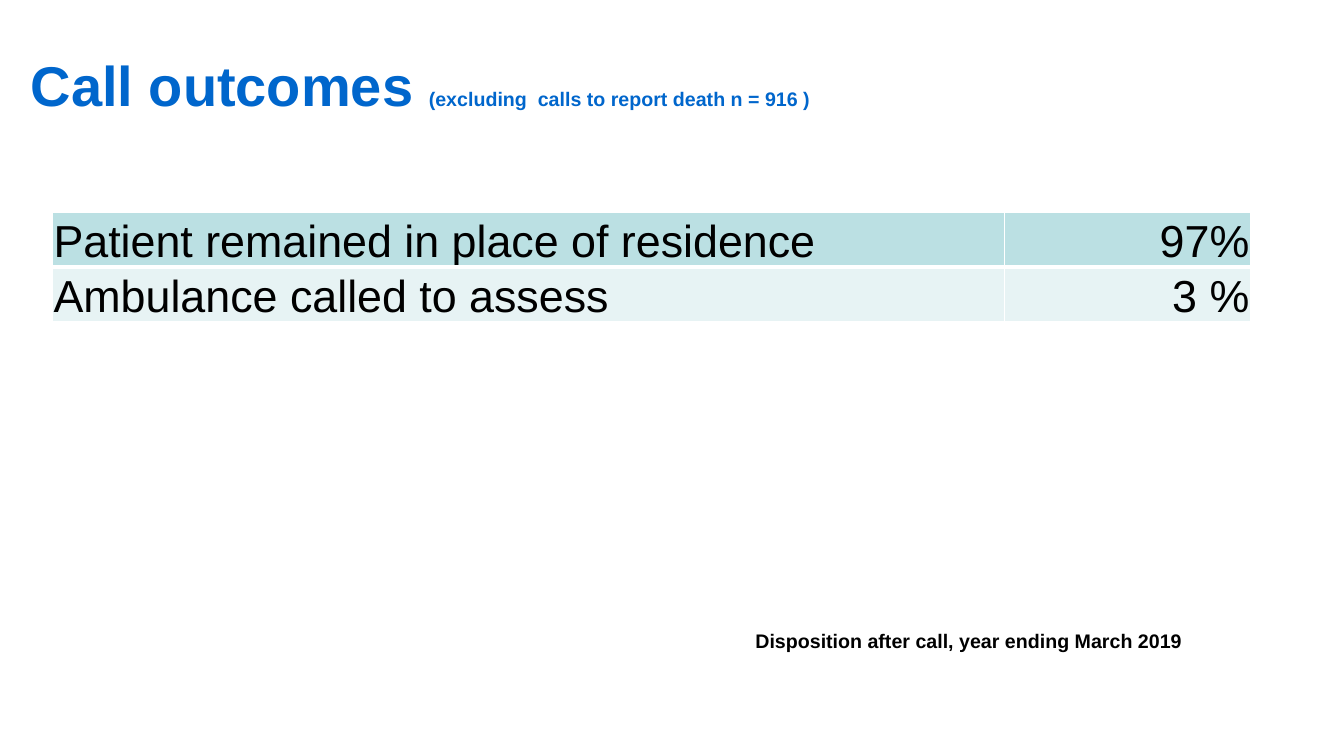
from dataclasses import dataclass

from lxml import etree
from pptx import Presentation
from pptx.dml.color import RGBColor
from pptx.enum.text import MSO_ANCHOR, PP_ALIGN
from pptx.oxml.ns import qn
from pptx.util import Pt

LEFT, RIGHT = PP_ALIGN.LEFT, PP_ALIGN.RIGHT
TOP, MIDDLE, BOTTOM = MSO_ANCHOR.TOP, MSO_ANCHOR.MIDDLE, MSO_ANCHOR.BOTTOM
EMU_PER_PX = 9525
BLANK_LAYOUT = 6


@dataclass(frozen=True)
class Theme:
    """Colours, font and type sizes of the deck."""
    font: str = "Arial"
    title: str = "0066CC"
    text: str = "000000"
    border: str = "FFFFFF"
    bands: tuple = ("BBE0E3", "E7F3F4")
    title_size: int = 40
    table_size: int = 32
    note_size: int = 14


THEME = Theme()
OUTCOMES = [
    ("Patient remained in place of residence", "97%"),
    ("Ambulance called to assess", "3 %"),
]


def px(length):
    """Turn px into EMU."""
    return length * EMU_PER_PX


def add_run(para, text, size, color, bold=False):
    """Add one styled run to a paragraph."""
    span = para.add_run()
    span.text = text
    span.font.name = THEME.font
    span.font.size = Pt(size)
    span.font.bold = bold
    span.font.color.rgb = RGBColor.from_string(color)


def add_text(page, box, spans, color, anchor=TOP, wrap=True):
    """Place a bold line of (text, size) spans in a box."""
    frame = page.shapes.add_textbox(*map(px, box)).text_frame
    frame.word_wrap = wrap
    frame.vertical_anchor = anchor
    for text, size in spans:
        add_run(frame.paragraphs[0], text, size, color, bold=True)


def add_border(cell, side, points):
    """Draw one side of a cell's border."""
    properties = cell._tc.get_or_add_tcPr()
    line = etree.SubElement(properties, qn(f"a:ln{side}"), w=str(Pt(points)))
    fill = etree.SubElement(line, qn("a:solidFill"))
    etree.SubElement(fill, qn("a:srgbClr"), val=THEME.border)


def fill_cell(cell, text, align, band, borders):
    """Style one table cell and write its text."""
    cell.margin_left = cell.margin_right = cell.margin_top = px(1)
    cell.margin_bottom = 0
    cell.vertical_anchor = BOTTOM
    for side, points in borders.items():
        add_border(cell, side, points)
    cell.fill.solid()
    cell.fill.fore_color.rgb = RGBColor.from_string(band)
    para = cell.text_frame.paragraphs[0]
    para.alignment = align
    add_run(para, text, THEME.table_size, THEME.text)


def add_outcomes(page, box, value_width):
    """Place the table of call outcomes in a box."""
    left, top, width, height = box
    row_count = len(OUTCOMES)
    table = page.shapes.add_table(row_count, 2, *map(px, box)).table
    table.first_row = table.horz_banding = False
    table.columns[0].width = px(width - value_width)
    table.columns[1].width = px(value_width)
    for index, values in enumerate(OUTCOMES):
        table.rows[index].height = px(height // row_count)
        above = 1 if index == 0 else 3
        below = 1 if index == row_count - 1 else 3
        borders = {"L": 1, "R": 1, "T": above, "B": below}
        for column, align in enumerate((LEFT, RIGHT)):
            fill_cell(table.cell(index, column), values[column], align,
                      THEME.bands[index % 2], borders)


def build_outcomes_page(deck):
    """Add the call outcomes page."""
    page = deck.slides.add_slide(deck.slide_layouts[BLANK_LAYOUT])
    title = [
        ("Call outcomes ", THEME.title_size),
        ("(excluding  calls to report death n = 916 )", THEME.note_size),
    ]
    add_text(page, (20, 35, 786, 90), title, THEME.title, MIDDLE)
    note = [("Disposition after call, year ending March 2019", THEME.note_size)]
    add_text(page, (710, 594, 427, 55), note, THEME.text, wrap=False)
    add_outcomes(page, (50, 202, 1141, 104), 234)


def main():
    """Build and save the deck."""
    deck = Presentation()
    deck.slide_width, deck.slide_height = px(1280), px(720)
    build_outcomes_page(deck)
    deck.save("out.pptx")


if __name__ == "__main__":
    main()
